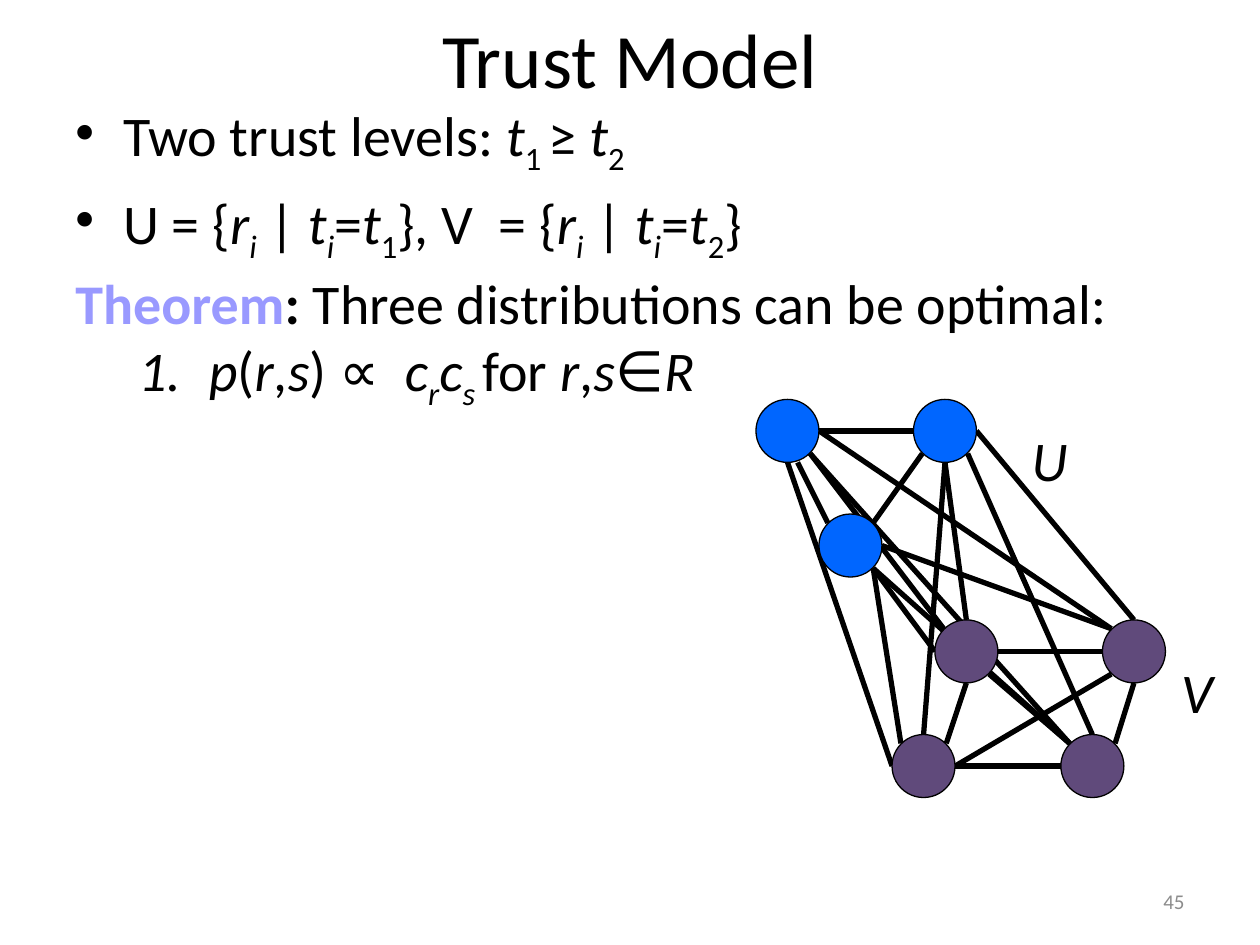
from lxml.etree import SubElement
from pptx import Presentation
from pptx.dml.color import RGBColor
from pptx.enum.shapes import MSO_CONNECTOR as CONNECTOR, MSO_SHAPE as SHAPE
from pptx.enum.text import MSO_ANCHOR as ANCHOR, PP_ALIGN as ALIGN
from pptx.oxml.ns import qn
from pptx.util import Inches, Pt

BLACK = RGBColor(0x00, 0x00, 0x00)
GRAY = RGBColor(0x8C, 0x8C, 0x8C)
LILAC = RGBColor(0x99, 0x99, 0xFF)
BLUE = RGBColor(0x00, 0x66, 0xFF)
PURPLE = RGBColor(0x60, 0x4A, 0x7B)


def add_spans(para, spans, size=32, color=BLACK):
    for text, style in spans:
        span = para.add_run()
        span.text = text
        span.font.name = "Calibri"
        span.font.size = Pt(size)
        span.font.color.rgb = LILAC if "lilac" in style else color
        span.font.bold = "bold" in style
        span.font.italic = "italic" in style
        if "sub" in style:
            span.font._element.set("baseline", "-25000")


def add_bullet(para, margin, hanging, tag, name, value):
    props = para._p.get_or_add_pPr()
    props.set("marL", str(Inches(margin)))
    props.set("indent", str(Inches(-hanging)))
    SubElement(props, qn(tag)).set(name, value)


deck = Presentation()
deck.slide_width, deck.slide_height = Inches(10), Inches(7.5)
page = deck.slides.add_slide(deck.slide_layouts[5])

title = page.shapes.title
title.left, title.top = Inches(0.5), Inches(0)
title.width, title.height = Inches(9), Inches(0.92)
title.text_frame.vertical_anchor = ANCHOR.MIDDLE
title.text_frame.paragraphs[0].alignment = ALIGN.CENTER
add_spans(title.text_frame.paragraphs[0], [("Trust Model", "")], 44)

radius, diagonal = 0.25, 0.18
sites = {
    "top": (0, -radius), "bottom": (0, radius),
    "left": (-radius, 0), "right": (radius, 0),
    "top left": (-diagonal, -diagonal), "top right": (diagonal, -diagonal),
    "bottom left": (-diagonal, diagonal), "bottom right": (diagonal, diagonal),
    "low right": (0.08, radius),
}
nodes = {
    "u1": (6.25, 3.42, BLUE), "u2": (7.5, 3.42, BLUE), "u3": (6.75, 4.33, BLUE),
    "v1": (7.67, 5.17, PURPLE), "v2": (9, 5.17, PURPLE),
    "v3": (7.33, 6.08, PURPLE), "v4": (8.67, 6.08, PURPLE),
}
edges = [
    ("v4", "top", "u2", "bottom right"),
    ("v4", "top left", "u3", "bottom right"),
    ("v4", "top left", "u1", "bottom right"),
    ("v2", "top left", "u3", "right"),
    ("v2", "top", "u2", "right"),
    ("v3", "top", "u2", "bottom"),
    ("v3", "top left", "u3", "bottom right"),
    ("u3", "bottom right", "v1", "left"),
    ("u2", "bottom", "v1", "top"),
    ("v2", "top left", "u1", "right"),
    ("v1", "top left", "u1", "bottom right"),
    ("v3", "left", "u1", "bottom"),
    ("u1", "right", "u2", "left"),
    ("u3", "top right", "u2", "bottom left"),
    ("u1", "low right", "u3", "top left"),
    ("v1", "right", "v2", "left"),
    ("v3", "right", "v4", "left"),
    ("v1", "bottom right", "v4", "top left"),
    ("v3", "right", "v2", "bottom left"),
    ("v2", "bottom", "v4", "top right"),
    ("v1", "bottom", "v3", "top right"),
]
for start, start_site, end, end_site in edges:
    ends = []
    for node, site in ((start, start_site), (end, end_site)):
        ends += [Inches(nodes[node][axis] + sites[site][axis]) for axis in (0, 1)]
    edge = page.shapes.add_connector(CONNECTOR.STRAIGHT, *ends)
    edge.line.color.rgb = BLACK
    edge.line.width = Pt(3)
    SubElement(edge._element.spPr, qn("a:effectLst"))

for x, y, color in nodes.values():
    circle = page.shapes.add_shape(
        SHAPE.OVAL, Inches(x - radius), Inches(y - radius), Inches(2 * radius), Inches(2 * radius))
    circle.shadow.inherit = False
    circle.fill.solid()
    circle.fill.fore_color.rgb = color
    circle.line.color.rgb = BLACK
    circle.line.width = Pt(0.75)

levels = [("Two trust levels: ", ""), ("t", "italic"), ("1 ", "sub"), ("≥ ", ""),
          ("t", "italic"), ("2", "sub")]
sets = []
for opening, level, closing in (("U = {", "1", "}, V  = {"), ("", "2", "}")):
    if opening:
        sets.append((opening, ""))
    sets += [("r", "italic"), ("i", "italic sub"), (" | ", ""), ("t", "italic"),
             ("i", "italic sub"), ("=", ""), ("t", "italic"), (level, "sub"), (closing, "")]

body = page.shapes.add_textbox(Inches(0.5), Inches(0.75), Inches(9), Inches(1.83)).text_frame
body.word_wrap = True
for para, spans in zip((body.paragraphs[0], body.add_paragraph()), (levels, sets)):
    para.space_before = Pt(6.4)
    add_bullet(para, 0.38, 0.38, "a:buChar", "char", "•")
    add_spans(para, spans)

theorem = page.shapes.add_textbox(Inches(0.5), Inches(2.08), Inches(9.33), Inches(1.18)).text_frame
theorem.word_wrap = True
add_spans(theorem.paragraphs[0], [("Theorem", "lilac bold"), (": ", "bold"),
                                  ("Three distributions can be optimal:", "")])
case = theorem.add_paragraph()
case.level = 1
add_bullet(case, 1.06, 0.56, "a:buAutoNum", "type", "arabicPeriod")
add_spans(case, [
    ("p", "italic"), ("(", ""), ("r", "italic"), (",", ""), ("s", "italic"), (") ∝  ", ""),
    ("c", "italic"), ("r", "italic sub"), ("c", "italic"), ("s ", "italic sub"), ("for ", ""),
    ("r", "italic"), (",", ""), ("s", "italic"), ("∈", ""), ("R", "italic")])

labels = [
    ("U", 8.08, 3.33, 0.5, 0.63, 32, BLACK, "italic", ALIGN.CENTER, ANCHOR.TOP),
    ("V", 9.25, 5.17, 0.5, 0.63, 32, BLACK, "italic", ALIGN.CENTER, ANCHOR.TOP),
    ("45", 7.17, 6.95, 2.33, 0.4, 12, GRAY, "", ALIGN.RIGHT, ANCHOR.MIDDLE),
]
for text, left, top, width, height, size, color, style, align, anchor in labels:
    box = page.shapes.add_textbox(Inches(left), Inches(top), Inches(width), Inches(height))
    box.text_frame.word_wrap = True
    box.text_frame.vertical_anchor = anchor
    para = box.text_frame.paragraphs[0]
    para.alignment = align
    add_spans(para, [(text, style)], size, color)

deck.save("out.pptx")
